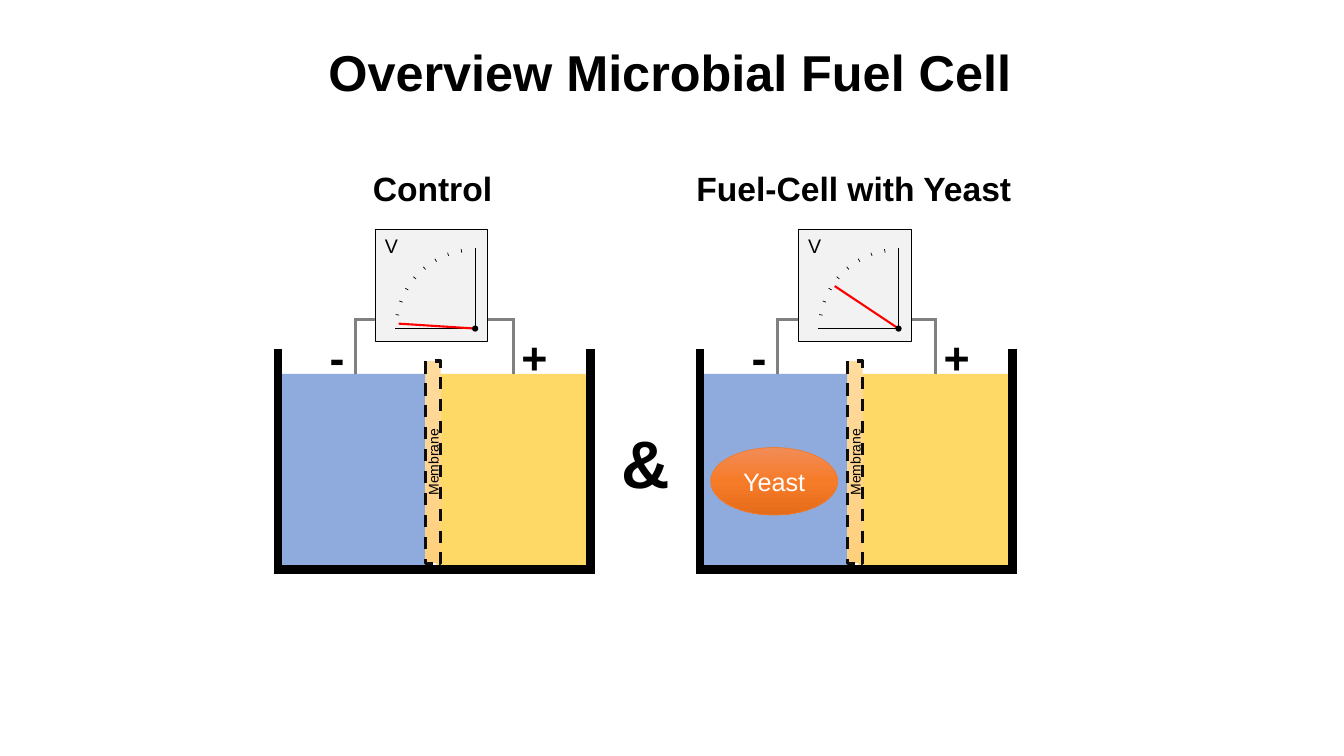
"""Build the slide that compares two microbial fuel cells."""
from copy import deepcopy
from math import cos, radians, sin

from pptx import Presentation
from pptx.dml.color import RGBColor as RGB
from pptx.enum.dml import MSO_LINE as DASH
from pptx.enum.shapes import MSO_CONNECTOR as LINK, MSO_SHAPE as KIND
from pptx.enum.text import MSO_ANCHOR as ANCHOR, MSO_AUTO_SIZE as AUTO, PP_ALIGN as ALIGN
from pptx.oxml.ns import qn
from pptx.util import Pt

BLACK = RGB(0, 0, 0)
WHITE = RGB(255, 255, 255)
RED = RGB(255, 0, 0)
GREY = RGB(0x80, 0x80, 0x80)
PALE = RGB(0xF2, 0xF2, 0xF2)
DARK = RGB(0x0D, 0x0D, 0x0D)
BLUE = RGB(0x8F, 0xAA, 0xDC)
YELLOW = RGB(0xFF, 0xD9, 0x66)
ORANGE = RGB(0xED, 0x7D, 0x31)
SAND = [RGB(0xFF, 0xDB, 0x9E), RGB(0xFF, 0xD5, 0x90), RGB(0xFF, 0xD0, 0x7C)]
EMBER = [RGB(0xF1, 0x8C, 0x57), RGB(0xF6, 0x7B, 0x28), RGB(0xE5, 0x6C, 0x19)]

SIZE = 80.7
TOP = 163.5
HUB = 234.7
REACH = 57.6


def style(frame, text, size, color=BLACK, bold=False):
    """Set the text of a frame and its font."""
    frame.text = text
    font = frame.paragraphs[0].runs[0].font
    font.name, font.size, font.bold = "Arial", Pt(size), bold
    font.color.rgb = color


def label(slide, text, x, y, wide, high, size, bold=True):
    """Add a text box on one line."""
    box = slide.shapes.add_textbox(Pt(x), Pt(y), Pt(wide), Pt(high))
    style(box.text_frame, text, size, bold=bold)
    box.text_frame.word_wrap = False
    box.text_frame.auto_size = AUTO.SHAPE_TO_FIT_TEXT


def paint(shape, fill, line=None, width=0.5):
    """Give a shape its fill, or a list of shades, and its outline."""
    shape.shadow.inherit = False
    if isinstance(fill, list):
        shape.fill.gradient()
        shape.fill.gradient_angle = 270
        stops = shape._element.spPr.find(".//" + qn("a:gsLst"))
        stops.insert(1, deepcopy(stops[0]))
        for stop, color, place in zip(shape.fill.gradient_stops, fill, (0, 0.5, 1)):
            stop.color.rgb = color
            stop.position = place
    else:
        shape.fill.solid()
        shape.fill.fore_color.rgb = fill
    if line is None:
        shape.line.fill.background()
    else:
        shape.line.color.rgb = line
        shape.line.width = Pt(width)


def block(slide, kind, x, y, wide, high, fill, line=None, width=0.5):
    """Add a painted preset shape."""
    shape = slide.shapes.add_shape(kind, Pt(x), Pt(y), Pt(wide), Pt(high))
    paint(shape, fill, line, width)
    return shape


def inscribe(shape, text, size, color):
    """Centre text in a shape."""
    frame = shape.text_frame
    style(frame, text, size, color)
    frame.vertical_anchor = ANCHOR.MIDDLE
    frame.paragraphs[0].alignment = ALIGN.CENTER


def rule(slide, start, end, color=BLACK, width=0.5):
    """Add a straight line."""
    line = slide.shapes.add_connector(LINK.STRAIGHT, *map(Pt, start + end))
    line.line.color.rgb = color
    line.line.width = Pt(width)
    props = line._element.spPr
    props.append(props.makeelement(qn("a:effectLst"), {}))


def polar(hub, reach, angle):
    """Return the point at an angle above the left side of the hub."""
    turn = radians(angle)
    return hub[0] - reach * cos(turn), hub[1] - reach * sin(turn)


def meter(slide, x, angle):
    """Add a voltmeter with its needle at an angle."""
    hub = (x + 71.6, HUB)
    block(slide, KIND.RECTANGLE, x, TOP, SIZE, SIZE, PALE, BLACK)
    label(slide, "V", x, TOP, 41.8, 24.5, 14, False)
    for tick in range(10, 90, 10):
        rule(slide, hub, polar(hub, REACH, tick))
    form = slide.shapes.build_freeform(*map(Pt, hub))
    arc = [polar(hub, 55, step) for step in range(0, 91, 3)]
    form.add_line_segments([(Pt(left), Pt(top)) for left, top in arc])
    paint(form.convert_to_shape(), PALE)
    for side in (0, 90):
        rule(slide, hub, polar(hub, REACH, side))
    rule(slide, hub, polar(hub, 54.7, angle), RED, 1.5)
    block(slide, KIND.OVAL, hub[0] - 2.2, hub[1] - 2.2, 4.4, 4.4, BLACK)


def cell(slide, x):
    """Add a tank with two halves, a membrane and wires."""
    for shift, fill in ((113, YELLOW), (0, BLUE)):
        block(slide, KIND.RECTANGLE, x + shift, 267.1, 110.2, 139.7, fill)
    for wall in (x, x + 223):
        rule(slide, (wall, 249.1), (wall, 409.7), width=6)
    rule(slide, (x, 406.8), (x + 221.4, 406.8), width=6)
    skin = block(slide, KIND.RECTANGLE, x + 105.1, 257.8, 10.9, 144.7, SAND, DARK, 2.25)
    skin.line.dash_style = DASH.DASH
    inscribe(skin, "Membrane", 10, BLACK)
    skin.text_frame._txBody.bodyPr.set("vert", "vert270")
    for wire in (x + 55.4, x + 167.9):
        rule(slide, (wire, 267.1), (wire, 228.3), GREY, 2.25)
    rule(slide, (x + 54.3, 228.3), (x + 169, 228.3), GREY, 2.25)
    label(slide, "-", x + 29.6, 232.2, 25.2, 46, 32)
    label(slide, "+", x + 166.7, 232.2, 33.1, 46, 32)


def head(slide):
    """Place and format the title."""
    title = slide.shapes.title
    title.left, title.top, title.width, title.height = map(Pt, (-1.4, 1.4, 960, 104.4))
    style(title.text_frame, "Overview Microbial Fuel Cell", 36, bold=True)
    title.text_frame.vertical_anchor = ANCHOR.MIDDLE
    line = title.text_frame.paragraphs[0]
    line.alignment, line.line_spacing = ALIGN.CENTER, 0.9


def main():
    """Build and save the slide."""
    deck = Presentation()
    deck.slide_width, deck.slide_height = Pt(960), Pt(540)
    slide = deck.slides.add_slide(deck.slide_layouts[5])
    head(slide)
    label(slide, "Control", 259.2, 116.6, 100.8, 36, 24)
    label(slide, "Fuel-Cell with Yeast", 490.3, 116.6, 241.2, 36, 24)
    for x, dial, angle in ((198.7, 267.8, 3.7), (500.2, 570.2, 33.7)):
        cell(slide, x)
        meter(slide, dial, angle)
    label(slide, "&", 437, 297.4, 49.7, 65.5, 48)
    yeast = block(slide, KIND.OVAL, 507.6, 319.7, 90.7, 48.2, EMBER, ORANGE)
    inscribe(yeast, "Yeast", 18, WHITE)
    deck.save("out.pptx")


if __name__ == "__main__":
    main()
